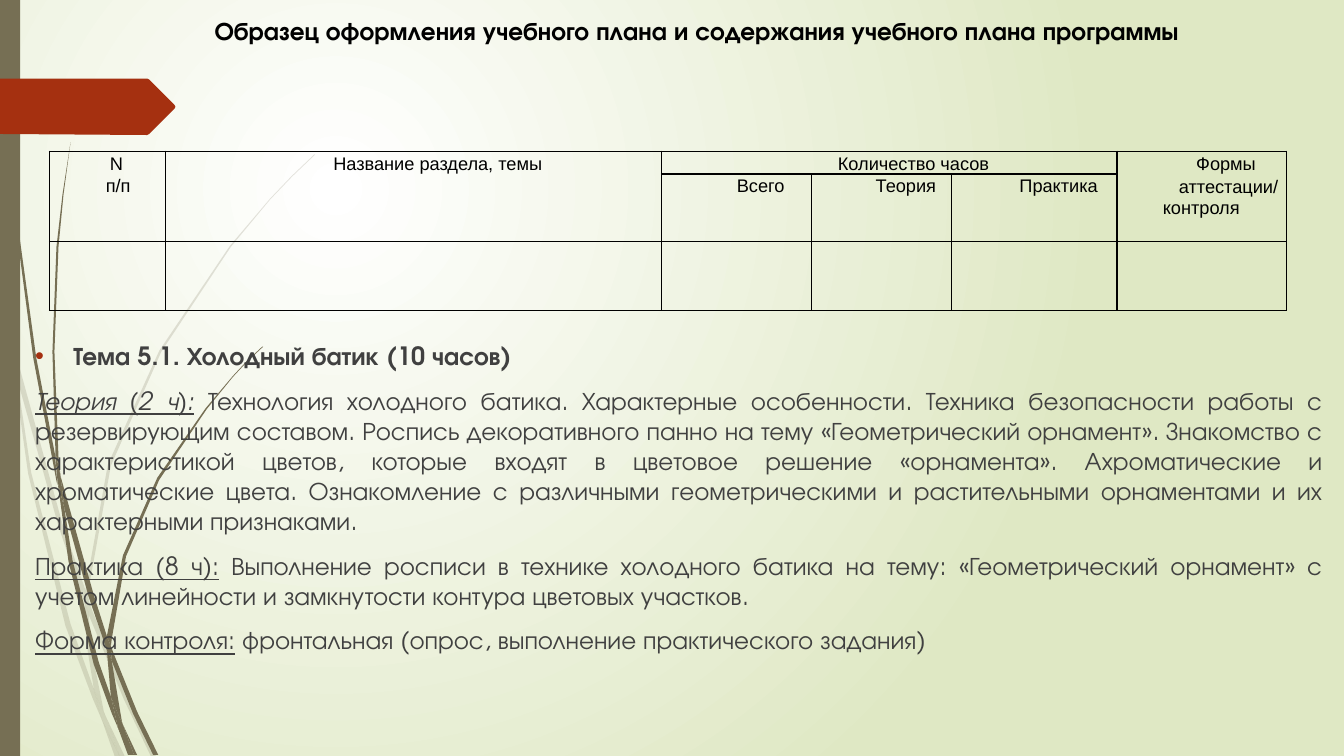
from pptx import Presentation
from pptx.util import Inches, Pt
from pptx.dml.color import RGBColor
from pptx.enum.shapes import MSO_SHAPE as Shape
from pptx.enum.text import PP_ALIGN as Align, MSO_ANCHOR as Anchor
from pptx.oxml.ns import qn
from lxml.etree import SubElement as Sub

# Content
FONT = "TeX Gyre Adventor"
EARTH, RED, INK, BLACK = "766F54", "A53010", "404040", "000000"

TITLE = "Образец оформления учебного плана и содержания учебного плана программы"

COLS = [1.15, 4.92, 1.49, 1.39, 1.64, 1.68]
ROWS = [0.16, 0.42, 0.69]
# row, column, rows spanned, columns spanned, lines, space after the first line
HEADS = [
    (0, 0, 2, 1, ["N", "п/п"], 0.7),
    (0, 1, 2, 1, ["Название раздела, темы "], 0),
    (0, 2, 1, 3, ["Количество часов "], 0),
    (0, 5, 2, 1, ["Формы ", "аттестации/ контроля "], 0.9),
    (1, 2, 1, 1, ["Всего "], 0),
    (1, 3, 1, 1, ["Теория "], 0),
    (1, 4, 1, 1, ["Практика "], 0),
]

# Each paragraph is a list of (text, style letters)
BODY = [
    [("Тема 5.1. Холодный батик (10 часов)", "b")],
    [("Теория (2 ч):", "iu"),
     (" Технология холодного батика. Характерные особенности. Техника "
      "безопасности работы с резервирующим составом. Роспись декоративного "
      "панно на тему «Геометрический орнамент». Знакомство с характеристикой "
      "цветов, которые входят в цветовое решение «орнамента». Ахроматические "
      "и хроматические цвета. Ознакомление с различными геометрическими и "
      "растительными орнаментами и их характерными признаками.", "")],
    [("Практика (8 ч):", "u"),
     (" Выполнение росписи в технике холодного батика на тему: "
      "«Геометрический орнамент» с учетом линейности и замкнутости контура "
      "цветовых участков.", "")],
    [("Форма контроля:", "u"),
     (" фронтальная (опрос, выполнение практического задания)", "")],
]

# Grass outlines, as x, y corners in inches
PALE = [
    [(.11, 3.5), (.09, 3.22), (0, 2.82), (0, 2.99), (.1, 3.44)],
    [(.58, 5.22), (.84, 5.99), (.85, 5.86), (.62, 5.2), (.14, 3.45), (.17, 3.76)],
    [(.92, 6.07), (.88, 5.96), (.88, 6.1), (1.23, 6.94), (1.5, 7.51),
     (1.55, 7.51), (1.27, 6.92)],
    [(1.19, 7.51), (1.24, 7.51), (1.05, 7.11)],
    [(.93, 6.83), (.7, 6.19), (.31, 4.69), (.17, 3.76), (.11, 3.5), (.28, 4.7),
     (.65, 6.21), (.92, 6.93), (1.01, 7.14), (.99, 7.07)],
    [(.84, 5.99), (.87, 6.46), (.93, 6.83), (.96, 6.92), (1.05, 7.11),
     (1.03, 7.06), (.91, 6.46), (.88, 6.1), (.88, 6.08)],
    [(.88, 5.84), (1.1, 4.62), (1.6, 3.49), (2.29, 2.45), (2.68, 1.98),
     (2.9, 1.75), (3.12, 1.54), (3.12, 1.53), (2.89, 1.75), (2.68, 1.97),
     (2.28, 2.44), (1.58, 3.48), (1.07, 4.61), (.85, 5.84), (.85, 5.86),
     (.88, 5.96)],
    [(1.01, 7.14), (1.14, 7.51), (1.19, 7.51)],
    [(.88, 6.08), (.88, 6.1), (.88, 5.96), (.85, 5.86), (.84, 5.99)],
    [(.96, 6.92), (.93, 6.83), (.99, 7.07), (1.01, 7.14), (1.19, 7.51),
     (1.05, 7.11)],
]
DARK = [
    [(.07, 1.1), (.17, 2.33), (.33, 3.55), (.56, 4.77), (.57, 4.81), (.55, 4.57),
     (.55, 4.53), (.36, 3.55), (.19, 2.32), (.08, 1.09), (.05, .48), (.04, 0),
     (.03, 0), (.04, .48)],
    [(.88, 5.92), (1.06, 6.45), (1.06, 6.31), (.93, 5.9), (.6, 4.72), (.64, 5.05)],
    [(1.13, 6.49), (1.1, 6.41), (1.11, 6.56), (1.32, 7.08), (1.52, 7.49),
     (1.57, 7.49), (1.36, 7.06)],
    [(1.1, 6.91), (.98, 6.57), (.72, 5.56), (.64, 5.05), (.57, 4.77), (.68, 5.57),
     (.93, 6.59), (1.11, 7.08), (1.17, 7.22), (1.16, 7.17)],
    [(.6, 4.72), (.58, 4.53), (.54, 3.49), (.58, 2.45), (.63, 1.93), (.7, 1.41),
     (.62, 1.93), (.56, 2.45), (.52, 3.49), (.55, 4.49)],
    [(1.33, 7.49), (1.36, 7.49), (1.22, 7.19)],
    [(.57, 4.77), (.64, 5.05), (.6, 4.72), (.55, 4.49), (.55, 4.53)],
    [(1.11, 6.33), (1.25, 5.52), (1.58, 4.76), (2.05, 4.06), (2.31, 3.74),
     (2.45, 3.59), (2.61, 3.44), (2.6, 3.44), (2.45, 3.58), (2.31, 3.73),
     (2.04, 4.05), (1.56, 4.74), (1.22, 5.51), (1.06, 6.31), (1.1, 6.41)],
    [(1.17, 7.22), (1.27, 7.49), (1.31, 7.49)],
    [(1.06, 6.45), (1.1, 6.91), (1.16, 7.06), (1.22, 7.19), (1.21, 7.16),
     (1.11, 6.56), (1.09, 6.51)],
    [(1.06, 6.45), (1.09, 6.51), (1.11, 6.56), (1.1, 6.41), (1.06, 6.31)],
    [(1.16, 7.06), (1.1, 6.91), (1.16, 7.17), (1.17, 7.22), (1.3, 7.49),
     (1.33, 7.49), (1.22, 7.19)],
]
ARROW = [(0, .78), (1.46, .78), (1.48, .79), (1.73, 1.04), (1.74, 1.06),
         (1.73, 1.08), (1.48, 1.33), (1.46, 1.34), (0, 1.33)]


# Helpers
def hue(code):
    return RGBColor.from_string(code)


def paint(shape, code):
    shape.shadow.inherit = False
    shape.fill.solid()
    shape.fill.fore_color.rgb = hue(code)
    shape.line.fill.background()


def draw(pts, code, alpha=None):
    pts = [(Inches(x), Inches(y)) for x, y in pts]
    pen = slide.shapes.build_freeform(*pts[0], scale=1.0)
    pen.add_line_segments(pts[1:], close=True)
    shape = pen.convert_to_shape()
    paint(shape, code)
    if alpha:
        rgb = shape.fill._xPr.find(".//" + qn("a:srgbClr"))
        Sub(rgb, qn("a:alpha"), val=str(alpha * 1000))


def write(para, text, size, font, code, style=""):
    run = para.add_run()
    run.text = text
    face = run.font
    face.size, face.name, face.color.rgb = Pt(size), font, hue(code)
    face.bold, face.italic, face.underline = [c in style for c in "biu"]


def indent(para, left, first):
    props = para._p.get_or_add_pPr()
    props.set("marL", str(Inches(left)))
    props.set("indent", str(Inches(first)))
    return props


def add_box(*place):
    frame = slide.shapes.add_textbox(*map(Inches, place)).text_frame
    frame.word_wrap = True
    return frame


def border(cell):
    props = cell._tc.get_or_add_tcPr()
    for n, side in enumerate(("lnL", "lnR", "lnT", "lnB")):
        line = props.makeelement(qn("a:" + side), {"w": str(Pt(1))})
        props.insert(n, line)
        fill = Sub(line, qn("a:solidFill"))
        Sub(fill, qn("a:srgbClr"), val=BLACK)


# Slide and background
deck = Presentation()
deck.slide_width, deck.slide_height = Inches(13.33), Inches(7.5)
slide = deck.slides.add_slide(deck.slide_layouts[6])
back = slide.background.fill
back.gradient()
for stop, code in zip(back.gradient_stops, ("FFFFFF", "DFE8C4")):
    stop.color.rgb = hue(code)
grad = slide.background._cSld.find(".//" + qn("a:gradFill"))
lin = grad.find(qn("a:lin"))
ring = grad.makeelement(qn("a:path"), {"path": "circle"})
grad.replace(lin, ring)
Sub(ring, qn("a:fillToRect"), l="50000", t="50000", r="100000", b="100000")

# Grass, side bar and arrow
for blade in PALE:
    draw(blade, EARTH, 20)
for blade in DARK:
    draw(blade, EARTH)
paint(slide.shapes.add_shape(Shape.RECTANGLE, 0, 0, Inches(0.2), Inches(7.5)), EARTH)
draw(ARROW, RED)

# Table
grid = slide.shapes.add_table(len(ROWS), len(COLS), Inches(0.49), Inches(1.5),
                              Inches(sum(COLS)), Inches(sum(ROWS))).table
grid.first_row = grid.horz_banding = False
for col, wide in zip(grid.columns, COLS):
    col.width = Inches(wide)
for row, high in zip(grid.rows, ROWS):
    row.height = Inches(high)
for cell in grid.iter_cells():
    cell.fill.background()
    border(cell)
for r, c, down, across, lines, gap in HEADS:
    cell = grid.cell(r, c)
    if down * across > 1:
        cell.merge(grid.cell(r + down - 1, c + across - 1))
    cell.margin_left, cell.margin_top = Inches(0.07), Inches(0.01)
    cell.margin_right, cell.margin_bottom = Inches(0.03), 0
    cell.vertical_anchor = Anchor.TOP
    for n, text in enumerate(lines):
        para = cell.text_frame.add_paragraph() if n else cell.text_frame.paragraphs[0]
        para.alignment = Align.CENTER if c else Align.LEFT
        para.line_spacing = 1.07
        para.space_after = Pt(0 if n else gap)
        indent(para, 0.04 if text == "N" else 0, 0.49)
        write(para, text, 13, "Arial", BLACK)

# Title
para = add_box(0.49, 0.1, 12.85, 0.71).paragraphs[0]
para.alignment = Align.CENTER
write(para, TITLE, 18, FONT, BLACK, "b")

# Body
frame = add_box(0.25, 3.33, 12.97, 4.07)
for n, runs in enumerate(BODY):
    para = frame.add_paragraph() if n else frame.paragraphs[0]
    para.space_before = Pt(10)
    para.alignment = Align.JUSTIFY if n else Align.LEFT
    if n == 0:
        props = indent(para, 0.38, -0.38)
        Sub(Sub(props, qn("a:buClr")), qn("a:srgbClr"), val=RED)
        Sub(props, qn("a:buFont"), typeface="Arial")
        Sub(props, qn("a:buChar"), char="•")
    for text, style in runs:
        write(para, text, 18, FONT, INK, style)

deck.save("out.pptx")
